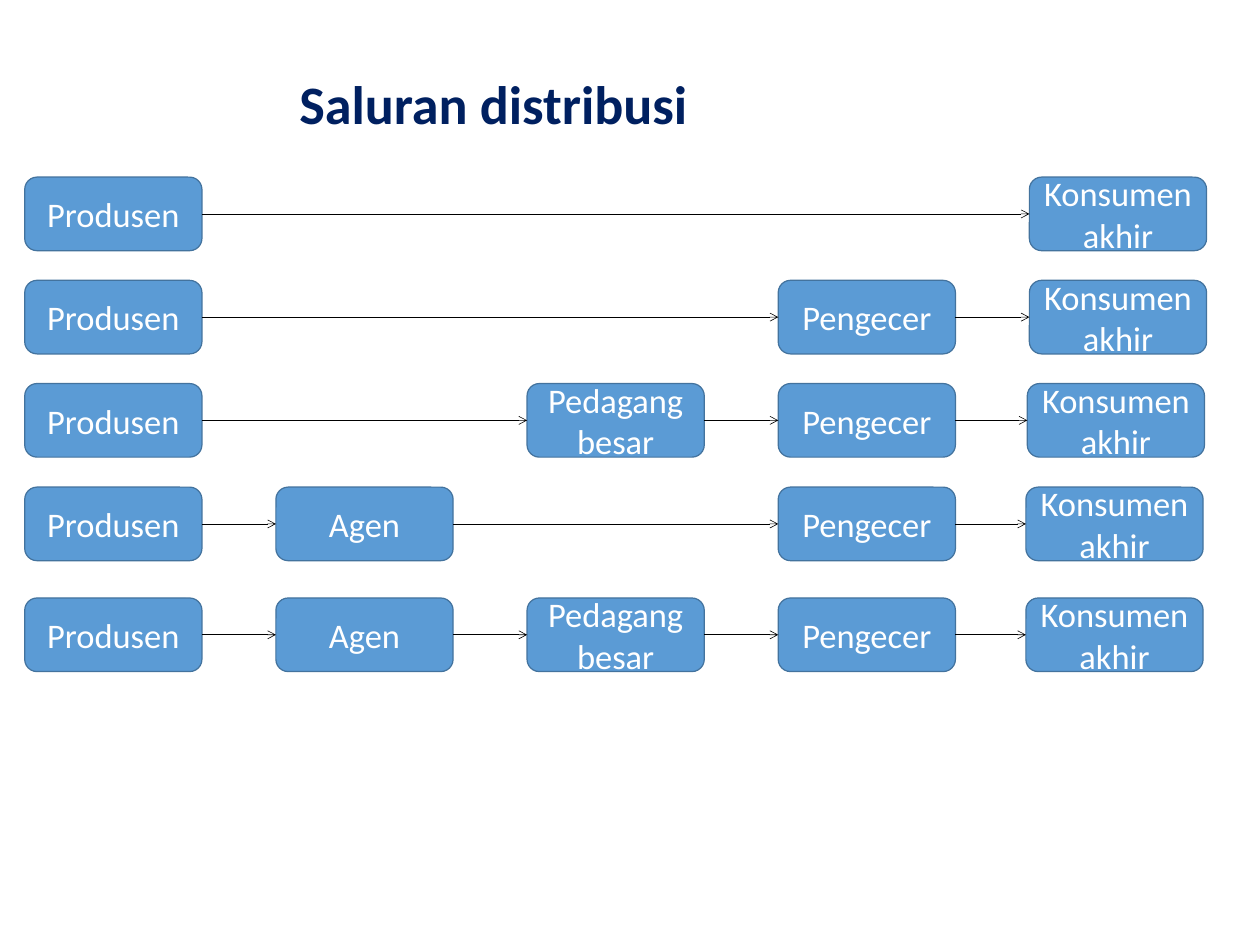
from itertools import pairwise

from lxml.etree import SubElement
from pptx import Presentation
from pptx.dml.color import RGBColor
from pptx.enum.shapes import MSO_CONNECTOR, MSO_SHAPE
from pptx.enum.text import MSO_ANCHOR, PP_ALIGN
from pptx.oxml.ns import qn
from pptx.util import Cm, Pt

COLORS = {
    "title": "002060",
    "box": "5B9BD5",
    "border": "43739E",
    "label": "FFFFFF",
    "arrow": "000000",
}
FONT = "Calibri"
BOX_W, BOX_H = 5.08, 2.11
COLUMN_STEP = 7.2
LEFT = 0.71
STAGES = ["Produsen", "Agen", "Pedagang besar", "Pengecer", "Konsumen akhir"]

# Top of the row, columns of the stages used, shift of the last box (cm)
CHANNELS = [
    (5.08, [0, 4], 0),
    (8.04, [0, 3, 4], 0),
    (11, [0, 2, 3, 4], -0.06),
    (13.97, [0, 1, 3, 4], -0.1),
    (17.15, [0, 1, 2, 3, 4], -0.1),
]


def color(name):
    return RGBColor.from_string(COLORS[name])


def add_run(p, text, size, color_name, bold=False):
    r = p.add_run()
    r.text = text
    r.font.name = FONT
    r.font.size = Pt(size)
    r.font.bold = bold
    r.font.color.rgb = color(color_name)


def add_title(s, left, top, width, height):
    tf = s.shapes.add_textbox(Cm(left), Cm(top), Cm(width), Cm(height)).text_frame
    tf.word_wrap = True
    tf.vertical_anchor = MSO_ANCHOR.MIDDLE
    p = tf.paragraphs[0]
    p.line_spacing = 0.9
    add_run(p, "Saluran distribusi", 44, "title", bold=True)


def add_stage(s, left, top, label):
    sp = s.shapes.add_shape(
        MSO_SHAPE.ROUNDED_RECTANGLE, Cm(left), Cm(top), Cm(BOX_W), Cm(BOX_H))
    sp.shadow.inherit = False
    sp.fill.solid()
    sp.fill.fore_color.rgb = color("box")
    sp.line.color.rgb = color("border")
    sp.line.width = Pt(1)
    tf = sp.text_frame
    tf.word_wrap = True
    tf.vertical_anchor = MSO_ANCHOR.MIDDLE
    p = tf.paragraphs[0]
    p.alignment = PP_ALIGN.CENTER
    add_run(p, label, 28, "label")
    return sp


def add_arrow(s, source, target):
    """Join the right side of source to the left side of target."""
    line = s.shapes.add_connector(MSO_CONNECTOR.STRAIGHT, 0, 0, 0, 0)
    line.begin_connect(source, 3)
    line.end_connect(target, 1)
    line.line.color.rgb = color("arrow")
    line.line.width = Pt(0.5)
    SubElement(line.line._get_or_add_ln(), qn("a:tailEnd"), type="arrow")
    SubElement(line._element.spPr, qn("a:effectLst"))


def add_channel(s, left, top, columns, last_shift):
    """Draw one row of stages, each joined to the next by an arrow."""
    boxes = []
    for column in columns:
        shift = last_shift if column == columns[-1] else 0
        boxes.append(add_stage(s, left + column * COLUMN_STEP + shift, top, STAGES[column]))
    for source, target in pairwise(boxes):
        add_arrow(s, source, target)


def main():
    prs = Presentation()
    prs.slide_width, prs.slide_height = Cm(36.12), Cm(27.1)
    s = prs.slides.add_slide(prs.slide_layouts[6])
    add_title(s, 8.33, 1.47, 27.79, 3.18)
    for top, columns, last_shift in CHANNELS:
        add_channel(s, LEFT, top, columns, last_shift)
    prs.save("out.pptx")


if __name__ == "__main__":
    main()
